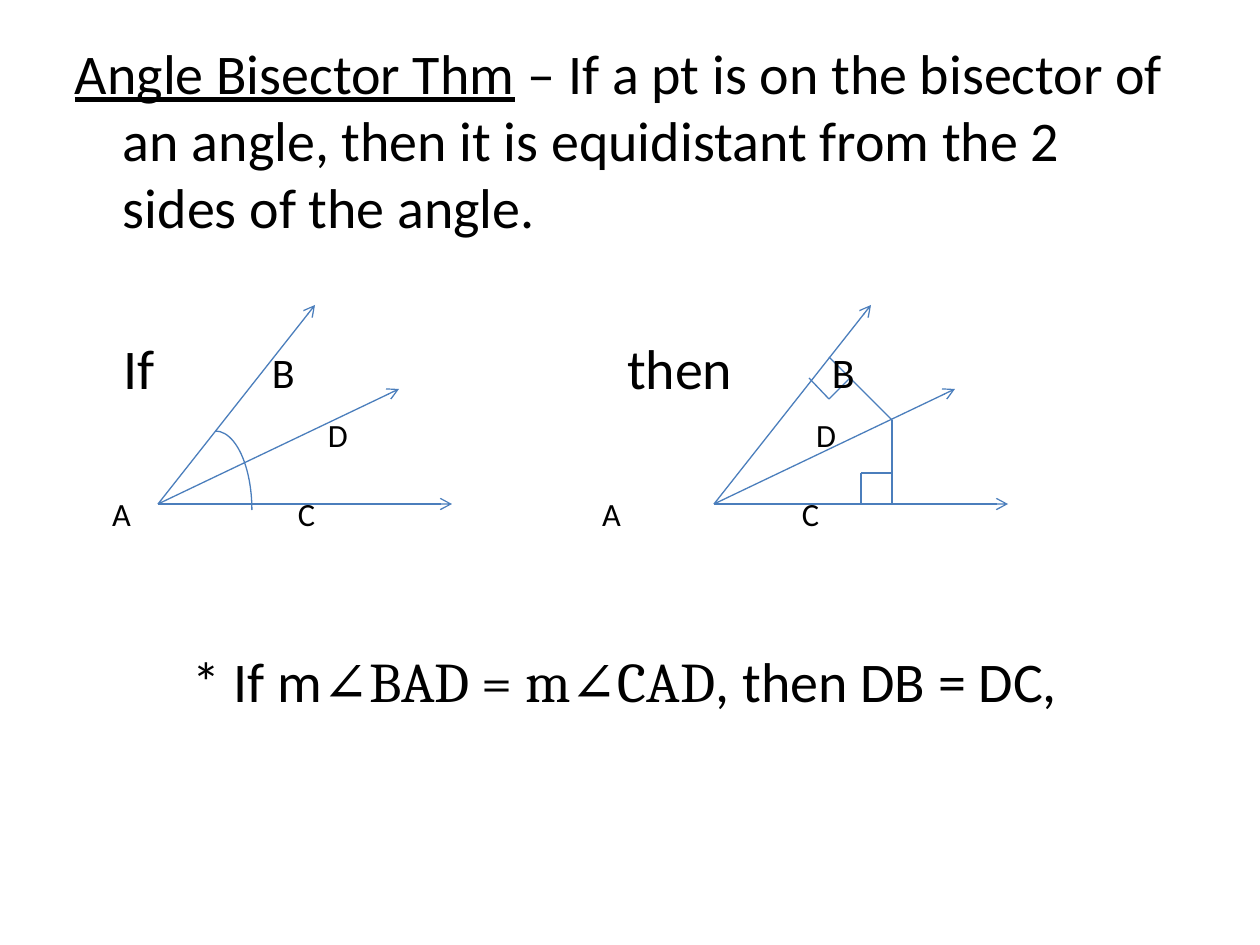
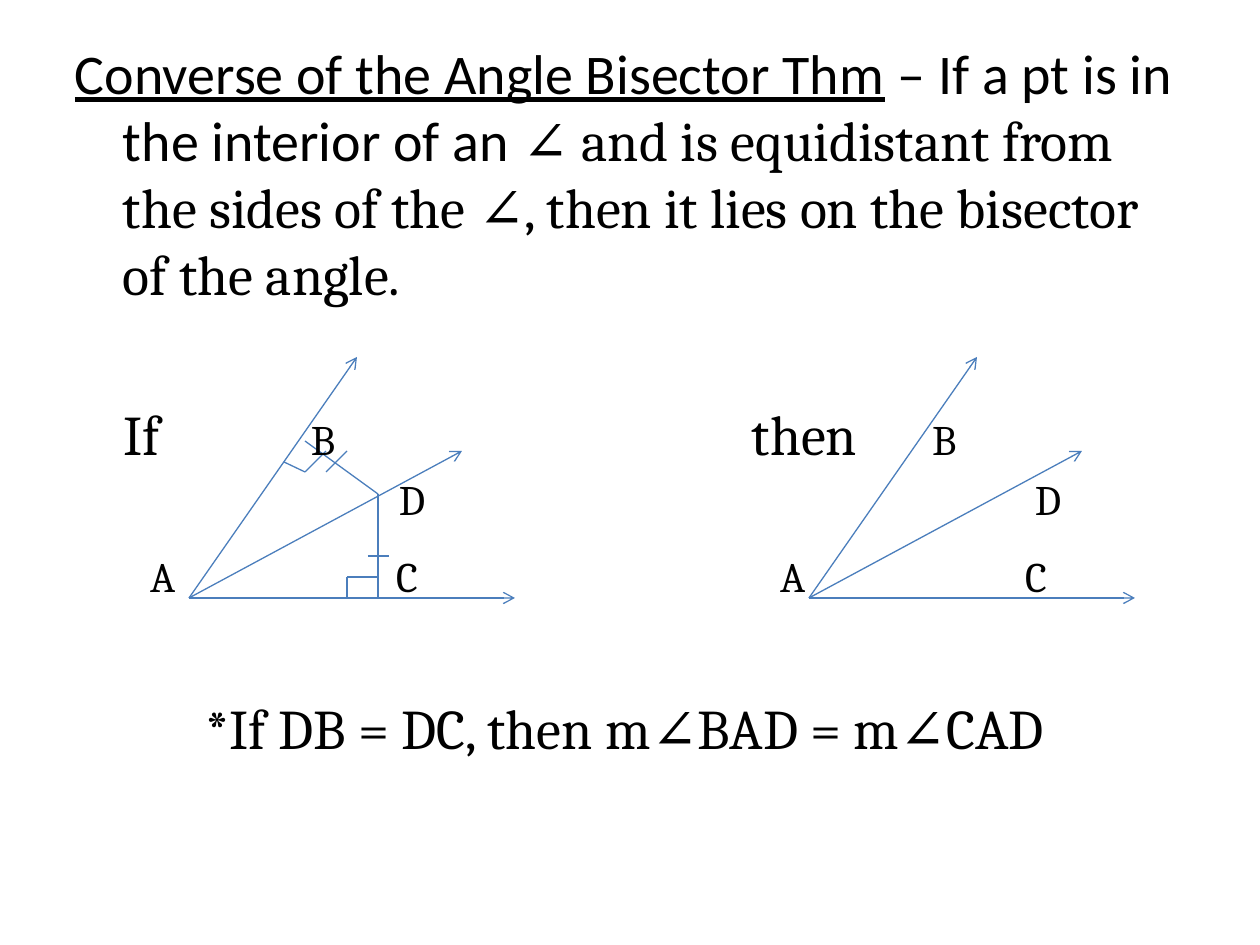
from itertools import pairwise

from lxml import etree
from pptx import Presentation
from pptx.dml.color import RGBColor
from pptx.enum.shapes import MSO_CONNECTOR, MSO_SHAPE
from pptx.enum.text import MSO_ANCHOR, PP_ALIGN
from pptx.oxml.ns import qn
from pptx.util import Pt

EMU_PER_PX = 914400 / 126
PX_PER_PT = 1.75
ASCENT = 0.95

INK, LINE_BLUE = "000000", "4B7EBC"
SANS, SERIF = "Calibri", "Cambria"
BODY_SIZE = 32
TEXT_LEFT, TEXT_WIDTH, HEADING_TOP = 75, 1110, 38
HANGING = 48
CONCLUSION_WIDTH = 1100


def px(length):
    return round(length * EMU_PER_PX)


def color(hex_text):
    return RGBColor.from_string(hex_text)


def add_text(slide, box, runs, size, align=PP_ALIGN.LEFT, wrap=True):
    """Write one paragraph; each run is (text, font, underlined)."""
    frame = slide.shapes.add_textbox(*map(px, box)).text_frame
    frame_format = {"margin_left": 0, "margin_right": 0, "margin_top": 0,
                    "margin_bottom": 0, "word_wrap": wrap,
                    "vertical_anchor": MSO_ANCHOR.TOP}
    for name, value in frame_format.items():
        setattr(frame, name, value)
    paragraph = frame.paragraphs[0]
    paragraph.alignment = align
    for text, font, underlined in runs:
        run = paragraph.add_run()
        run.text = text
        run_format = {"name": font, "size": Pt(size), "underline": underlined}
        for name, value in run_format.items():
            setattr(run.font, name, value)
        run.font.color.rgb = color(INK)
    return paragraph


def top_of_line(baseline, size):
    return round(baseline - ASCENT * size * PX_PER_PT)


def style_line(shape):
    shape.line.color.rgb = color(LINE_BLUE)
    shape.line.width = Pt(0.75)


def draw_path(slide, vertex, points, arrow=False):
    """Join points, given relative to the vertex, with straight lines."""
    x, y = vertex
    for (x1, y1), (x2, y2) in pairwise(points):
        ends = (x + x1, y + y1, x + x2, y + y2)
        segment = slide.shapes.add_connector(MSO_CONNECTOR.STRAIGHT, *map(px, ends))
        style_line(segment)
        if arrow:
            etree.SubElement(segment.line._get_or_add_ln(), qn("a:tailEnd"), type="arrow")
        etree.SubElement(segment._element.spPr, qn("a:effectLst"))


def draw_arc(slide, vertex, box):
    left, top, width, height = box
    arc = slide.shapes.add_shape(
        MSO_SHAPE.ARC, *map(px, (vertex[0] + left, vertex[1] + top, width, height)))
    arc.shadow.inherit = False
    arc.fill.background()
    style_line(arc)


def draw_angle(slide, vertex, look, labels, paths=()):
    """Draw three rays from the vertex, labels and extra lines."""
    for tip in look["tips"]:
        draw_path(slide, vertex, [(0, 0), tip], arrow=True)
    for points in paths:
        draw_path(slide, vertex, points)
    for text, left in labels.items():
        baseline, size = look["rows"].get(text, look["word_row"])
        box = (vertex[0] + left, top_of_line(vertex[1] + baseline, size), 120, 70)
        add_text(slide, box, [(text, look["font"], False)], size, wrap=False)


def add_heading(slide, runs, height):
    paragraph = add_text(slide, (TEXT_LEFT, HEADING_TOP, TEXT_WIDTH, height),
                         runs, BODY_SIZE)
    properties = paragraph._p.get_or_add_pPr()
    properties.set("marL", str(px(HANGING)))
    properties.set("indent", str(px(-HANGING)))


def add_conclusion(slide, baseline, runs):
    box = (TEXT_LEFT, top_of_line(baseline, BODY_SIZE), CONCLUSION_WIDTH, 70)
    add_text(slide, box, runs, BODY_SIZE, PP_ALIGN.CENTER)


def build_bisector_theorem(slide):
    add_heading(slide, [
        ("Angle Bisector Thm", SANS, True),
        (" – If a pt is on the bisector of an angle, then it is equidistant "
         "from the 2 sides of the angle.", SANS, False)], 205)
    look = {"font": SANS, "tips": [(294, 0), (157, -199), (241, -115)],
            "word_row": (-118, BODY_SIZE),
            "rows": {"B": (-118, 24), "D": (-58, 18.5),
                     "A": (21, 18.5), "C": (21, 18.5)}}
    given, result = (158, 504), (714, 504)
    draw_angle(slide, given, look, {"If": -35, "B": 114, "D": 170, "A": -46, "C": 140})
    draw_arc(slide, given, (21, -73, 73, 158))
    distances = [(115, -147), (178, -84), (178, 0)]
    corner_b = [(95, -126), (115, -105), (136, -126)]
    corner_c = [(147, 0), (147, -31), (178, -31)]
    draw_angle(slide, result, look,
               {"then": -87, "B": 118, "D": 102, "A": -112, "C": 88},
               [distances, corner_b, corner_c])
    add_conclusion(slide, 699, [
        ("* If m", SANS, False), ("∠BAD = m∠CAD", SERIF, False),
        (", then DB = DC,", SANS, False)])


def build_converse(slide):
    add_heading(slide, [
        ("Converse of the Angle Bisector Thm", SANS, True),
        (" – If a pt is in the interior of an ", SANS, False),
        ("∠ and is equidistant from the sides of the ∠, then it lies on the "
         "bisector of the angle.", SERIF, False)], 273)
    look = {"font": SERIF, "tips": [(326, 0), (168, -241), (273, -147)],
            "word_row": (-145, BODY_SIZE),
            "rows": {"B": (-145, 24), "D": (-85, 24), "A": (-8, 24), "C": (-8, 24)}}
    given, result = (189, 598), (809, 598)
    distances = [(116, -157), (189, -104), (189, 0)]
    tick_b = [(158, -147), (137, -126)]
    tick_c = [(179, -42), (200, -42)]
    corner_b = [(95, -136), (116, -126), (137, -147)]
    corner_c = [(189, -21), (158, -21), (158, 0)]
    draw_angle(slide, given, look,
               {"If": -66, "B": 122, "D": 210, "A": -39, "C": 207},
               [distances, tick_b, tick_c, corner_b, corner_c])
    draw_angle(slide, result, look,
               {"then": -57, "B": 123, "D": 226, "A": -29, "C": 216})
    add_conclusion(slide, 746, [("*If DB = DC, then m∠BAD = m∠CAD", SERIF, False)])


def main():
    deck = Presentation()
    deck.slide_width, deck.slide_height = px(1260), px(945)
    for build in (build_bisector_theorem, build_converse):
        build(deck.slides.add_slide(deck.slide_layouts[6]))
    deck.save("out.pptx")


if __name__ == "__main__":
    main()
